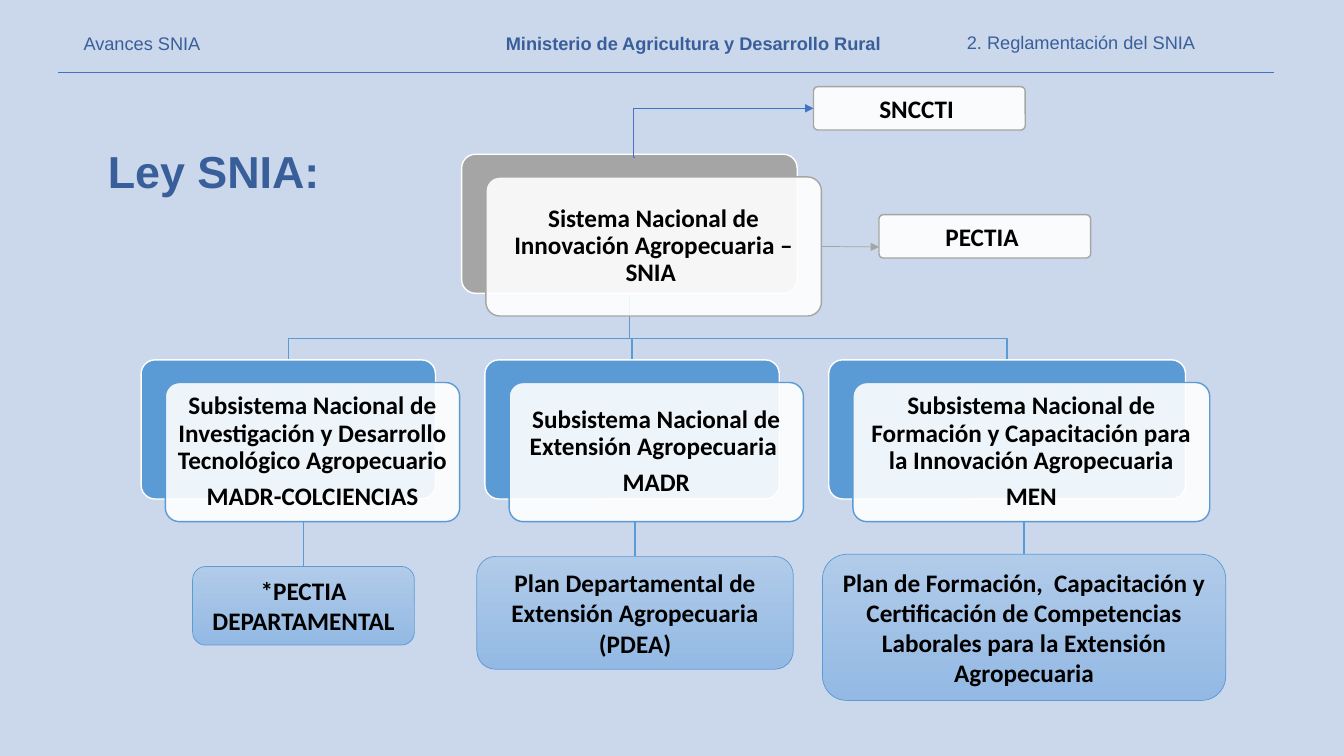
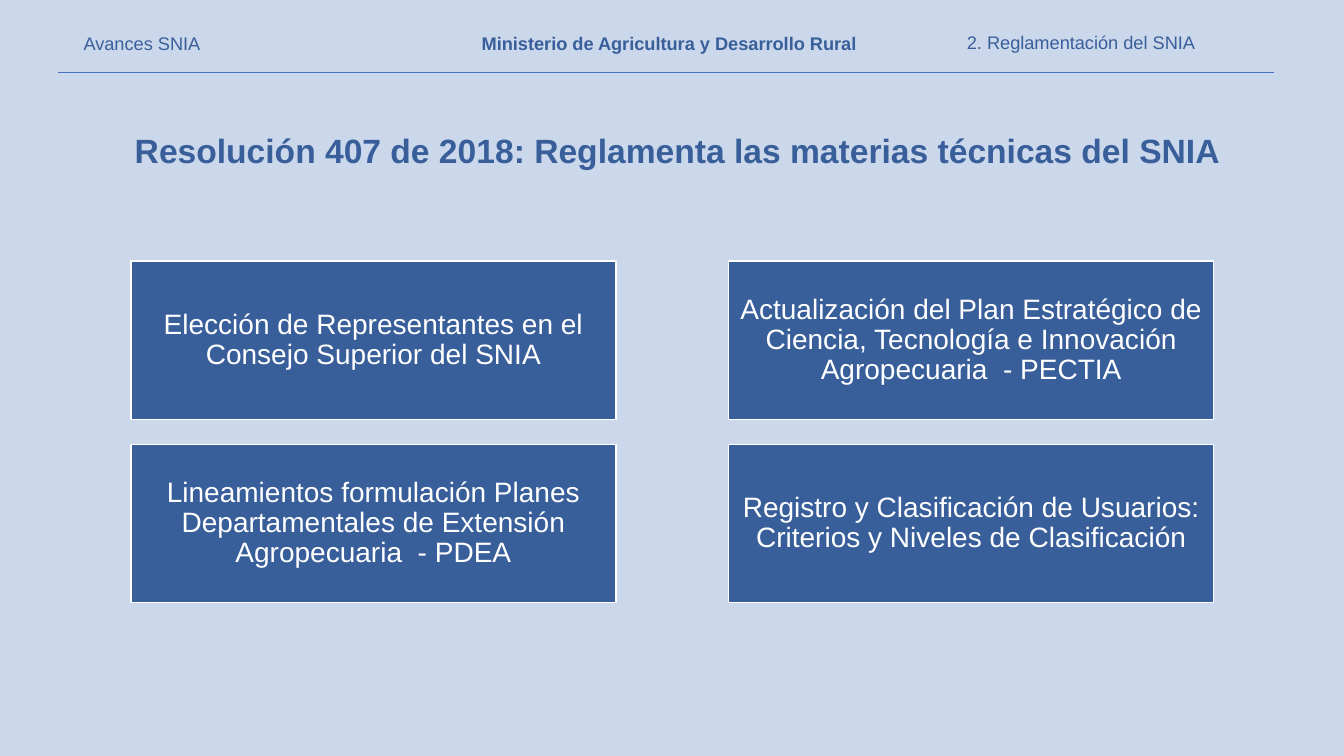
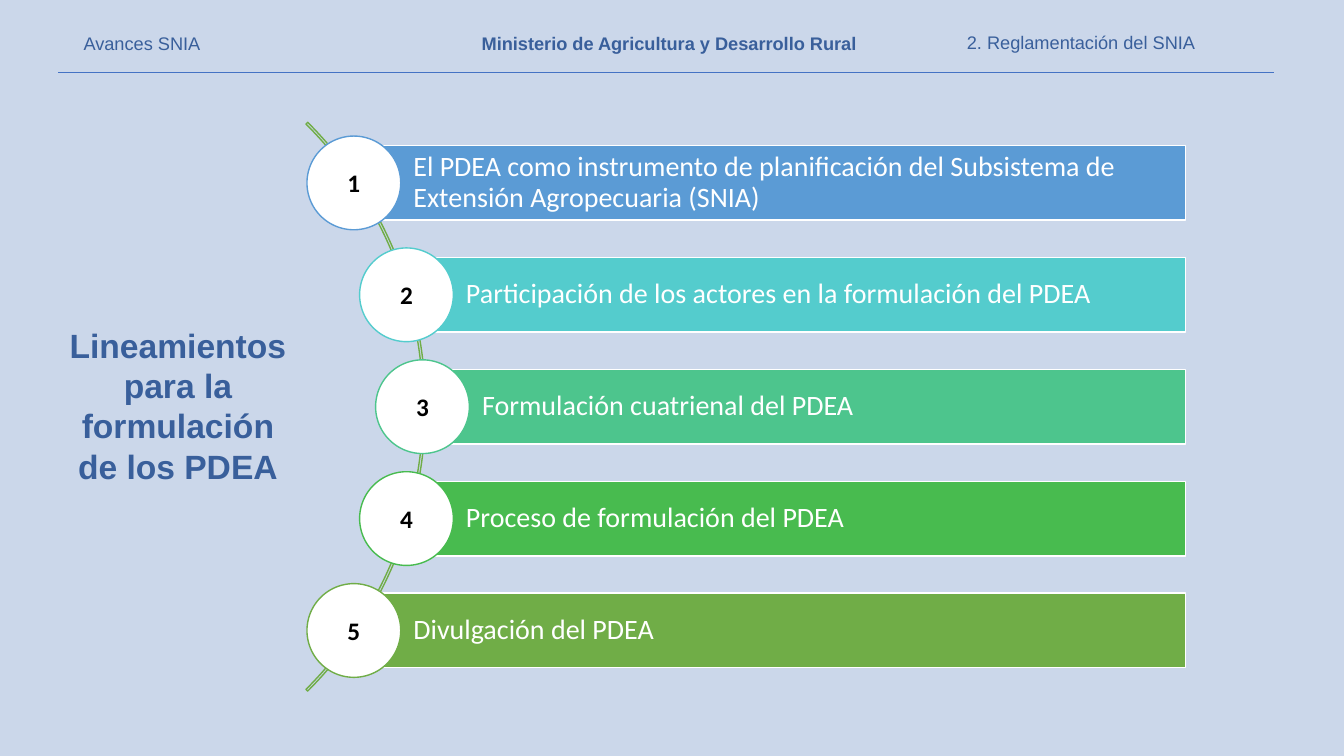
from math import sqrt

from pptx import Presentation
from pptx import util as u
from pptx.dml import color
from pptx.enum import shapes, text
from pptx.oxml import ns, xmlchemy

WIDTH, HEIGHT = 13.33, 7.5
SQUARE = HEIGHT / WIDTH
NAVY, SKY, GREY, WHITE, BLACK = "395F9B", "5B9BD5", "A5A5A5", "FFFFFF", "000000"
RULE, PAPER, GREEN = "4472C4", "CBD7EA", "70AD47"
PLAN_GRADIENT = ("B1CBE9", "93B9E4")
CARD_SHIFT = (1.8, 3)
CARD_HEIGHT = 18.4
CENTER, LEFT = text.PP_ALIGN.CENTER, text.PP_ALIGN.LEFT
BOX = shapes.MSO_SHAPE


def rgb(value):
    return color.RGBColor.from_string(value)


def across(share):
    return u.Inches(WIDTH * share / 100)


def down(share):
    return u.Inches(HEIGHT * share / 100)


def place(left, top, width, height):
    return across(left), down(top), across(width), down(height)


def add_child(parent, tag, **attributes):
    child = xmlchemy.OxmlElement(tag)
    for key, value in attributes.items():
        child.set(key, value)
    parent.append(child)
    return child


def write(frame, words, size, ink, font="Arial", bold=False, align=CENTER,
          insets=(7.2, 3.6, 7.2, 3.6), spacing=None, wrap=True):
    frame.text = words
    frame.word_wrap = wrap
    (frame.margin_left, frame.margin_top,
     frame.margin_right, frame.margin_bottom) = map(u.Pt, insets)
    for paragraph in frame.paragraphs:
        paragraph.alignment = align
        paragraph.line_spacing = spacing
        for run in paragraph.runs:
            run.font.name, run.font.size, run.font.bold = font, u.Pt(size), bold
            run.font.color.rgb = rgb(ink)
    for paragraph in frame.paragraphs[:-1]:
        paragraph.space_after = u.Pt(size * 0.35)


def label(slide, box, words, size, **style):
    caption = slide.shapes.add_textbox(*place(*box))
    write(caption.text_frame, words, size, NAVY, **style)


def block(slide, kind, box, fill, line, weight=1, alpha=None, corner=None):
    item = slide.shapes.add_shape(kind, *place(*box))
    item.shadow.inherit = False
    item.line.color.rgb = rgb(line)
    item.line.width = u.Pt(weight)
    if fill is None:
        item.fill.background()
    elif isinstance(fill, tuple):
        item.fill.gradient()
        item.fill.gradient_angle = 270
        for stop, shade in zip(item.fill.gradient_stops, fill):
            stop.color.rgb = rgb(shade)
    else:
        item.fill.solid()
        item.fill.fore_color.rgb = rgb(fill)
    if alpha:
        solid = item._element.spPr.find(ns.qn("a:solidFill"))
        add_child(solid[0], "a:alpha", val=str(alpha * 1000))
    if corner:
        item.adjustments[0] = corner
    return item


def link(slide, start, end, ink, weight, arrow=False, bend=None):
    kind = shapes.MSO_CONNECTOR.STRAIGHT if bend is None else shapes.MSO_CONNECTOR.ELBOW
    line = slide.shapes.add_connector(kind, across(start[0]), down(start[1]),
                                      across(end[0]), down(end[1]))
    line.line.color.rgb = rgb(ink)
    line.line.width = u.Pt(weight)
    properties = line._element.spPr
    if arrow:
        add_child(properties.find(ns.qn("a:ln")), "a:tailEnd", type="triangle")
    if bend is not None:
        guides = properties.find(ns.qn("a:prstGeom")).find(ns.qn("a:avLst"))
        add_child(guides, "a:gd", name="adj1", fmla=f"val {bend}")
    add_child(properties, "a:effectLst")
    return line


def branch(slide, points, ink):
    start, *others = [(across(x), down(y)) for x, y in points]
    builder = slide.shapes.build_freeform(*start)
    builder.add_line_segments(others, close=False)
    path = builder.convert_to_shape()
    path.shadow.inherit = False
    path.fill.background()
    path.line.color.rgb = rgb(ink)
    path.line.width = u.Pt(1)


def card(slide, left, top, width, accent, words):
    block(slide, BOX.ROUNDED_RECTANGLE, (left, top, width, CARD_HEIGHT),
          accent, WHITE, corner=0.1)
    front = block(slide, BOX.ROUNDED_RECTANGLE,
                  (left + CARD_SHIFT[0], top + CARD_SHIFT[1], width, CARD_HEIGHT),
                  WHITE, accent, alpha=90, corner=0.1)
    write(front.text_frame, words, 18, BLACK, "Calibri", True,
          insets=(5, 5, 5, 5), spacing=0.9)
    return front


def tag(slide, left, top, words):
    plate = block(slide, BOX.ROUNDED_RECTANGLE, (left, top, 15.75, 5.73),
                  WHITE, GREY, alpha=90, corner=0.1)
    write(plate.text_frame, words, 18, BLACK, "Calibri", True,
          insets=(3, 6.5, 7, 3.5), spacing=0.9)


def plan(slide, box, words):
    plate = block(slide, BOX.ROUNDED_RECTANGLE, box, PLAN_GRADIENT, SKY, 0.5)
    write(plate.text_frame, words, 18, BLACK, "Calibri", True)
    return plate


def new_slide(deck, ministry_left=35.1):
    slide = deck.slides.add_slide(deck.slide_layouts[6])
    link(slide, (4.35, 9.6), (94.8, 9.6), RULE, 0.5)
    for left, top, width, words, bold in (
            (5.48, 3.6, 10.28, "Avances SNIA", False),
            (ministry_left, 3.6, 29.78, "Ministerio de Agricultura y Desarrollo Rural", True),
            (71.2, 3.47, 18.68, "2. Reglamentación del SNIA", False)):
        label(slide, (left, top, width, 4.27), words, 13, bold=bold, align=LEFT, wrap=False)
    return slide


def system_slide(deck):
    slide = new_slide(deck, 36.9)
    label(slide, (7.28, 18.4, 20.7, 8.53), "Ley SNIA:", 32, bold=True, align=LEFT)
    system_left, system_top, system_width = 34.35, 20.4, 24.97
    subsystem_top, bus = 47.6, 44.8
    subsystems = (
        (21.9, "Subsistema Nacional de Investigación y Desarrollo Tecnológico Agropecuario \n"
               "MADR-COLCIENCIAS",
         (14.33, 74.93, 16.5, 10.4), "*PECTIA DEPARTAMENTAL"),
        (21.9, "Subsistema Nacional de Extensión Agropecuaria \nMADR",
         (35.48, 73.6, 23.55, 14.93), "Plan Departamental de Extensión Agropecuaria (PDEA)"),
        (26.55, "Subsistema Nacional de Formación y Capacitación para la Innovación "
                "Agropecuaria\nMEN",
         (61.2, 73.33, 30, 19.33),
         "Plan de Formación,  Capacitación y Certificación de Competencias Laborales "
         "para la Extensión Agropecuaria"))
    trunk = system_left + system_width / 2
    left, gap = 10.5, 3.68
    for width, name, plan_box, plan_name in subsystems:
        middle = left + width / 2
        branch(slide, ((trunk, system_top + CARD_HEIGHT), (trunk, bus),
                       (middle, bus), (middle, subsystem_top)), SKY)
        card(slide, left, subsystem_top, width, SKY, name)
        plan_plate = plan(slide, plan_box, plan_name)
        stem = plan_box[0] + plan_box[2] / 2
        link(slide, (stem, subsystem_top + CARD_SHIFT[1] + CARD_HEIGHT),
             (stem, plan_box[1]), SKY, 1).end_connect(plan_plate, 0)
        left += width + gap
    system = card(slide, system_left, system_top, system_width, GREY,
                  "Sistema Nacional de Innovación Agropecuaria –SNIA ")
    tag(slide, 65.4, 28.4, "PECTIA")
    link(slide, (61.12, 32.6), (65.4, 32.67), GREY, 0.5, arrow=True).begin_connect(system, 3)
    tag(slide, 60.53, 11.47, "SNCCTI")
    link(slide, (47.25, 20.8), (60.53, 14.33), RULE, 0.5, arrow=True, bend=-1000)


def resolution_slide(deck):
    slide = new_slide(deck)
    label(slide, (4.35, 16.53, 92.1, 17.47),
          "Resolución 407 de 2018: Reglamenta las materias técnicas del SNIA", 24, bold=True)
    topics = (
        "Elección de Representantes en el Consejo Superior del SNIA",
        "Actualización del Plan Estratégico de Ciencia, Tecnología e Innovación "
        "Agropecuaria  - PECTIA",
        "Lineamientos formulación Planes Departamentales de Extensión Agropecuaria  - PDEA",
        "Registro y Clasificación de Usuarios: Criterios y Niveles de Clasificación")
    for index, topic in enumerate(topics):
        row, column = divmod(index, 2)
        tile = block(slide, BOX.RECTANGLE,
                     (9.75 + 44.48 * column, 34.53 + 24.27 * row, 36.08, 20.93), NAVY, WHITE)
        write(tile.text_frame, topic, 20, WHITE, insets=(5.5, 5.5, 5.5, 5.5), spacing=0.9)


def guidelines_slide(deck):
    slide = new_slide(deck)
    label(slide, (4.35, 42.27, 17.78, 22.93),
          "Lineamientos para la formulación de los PDEA", 24, bold=True)
    hub, middle, radius, arc_size = 1.73, 53.8, 52.8, 106.4
    disc, bar_height, bar_right, step = 12.4, 9.87, 88.2, 14.8
    arc = block(slide, BOX.BLOCK_ARC,
                (hub - arc_size * SQUARE / 2, middle - arc_size / 2, arc_size * SQUARE, arc_size),
                None, GREEN)
    for index, angle in enumerate((189, 27, 0.003)):
        arc.adjustments[index] = angle
    guidelines = (
        (SKY, "El PDEA como instrumento de planificación del Subsistema de "
              "Extensión Agropecuaria (SNIA)"),
        ("54CCCD", "Participación de los actores en la formulación del PDEA"),
        ("4DC58D", "Formulación cuatrienal del PDEA"),
        ("48BB4F", "Proceso de formulación del PDEA"),
        (GREEN, "Divulgación del PDEA"))
    for index, (accent, guideline) in enumerate(guidelines):
        drop = step * (index - 2)
        x, y = hub + SQUARE * sqrt(radius ** 2 - drop ** 2), middle + drop
        bar = block(slide, BOX.RECTANGLE, (x, y - bar_height / 2, bar_right - x, bar_height),
                    accent, WHITE)
        write(bar.text_frame, guideline, 20, WHITE, "Calibri", align=LEFT,
              insets=(42.5, 4, 4, 4), spacing=0.9)
        number = block(slide, BOX.OVAL,
                       (x - disc * SQUARE / 2, y - disc / 2, disc * SQUARE, disc), WHITE, accent)
        write(number.text_frame, str(index + 1), 18, BLACK, "Calibri", True)


def main():
    deck = Presentation()
    deck.slide_width, deck.slide_height = u.Inches(WIDTH), u.Inches(HEIGHT)
    backdrop = deck.slide_master.background.fill
    backdrop.solid()
    backdrop.fore_color.rgb = rgb(PAPER)
    system_slide(deck)
    resolution_slide(deck)
    guidelines_slide(deck)
    deck.save("out.pptx")


if __name__ == "__main__":
    main()
